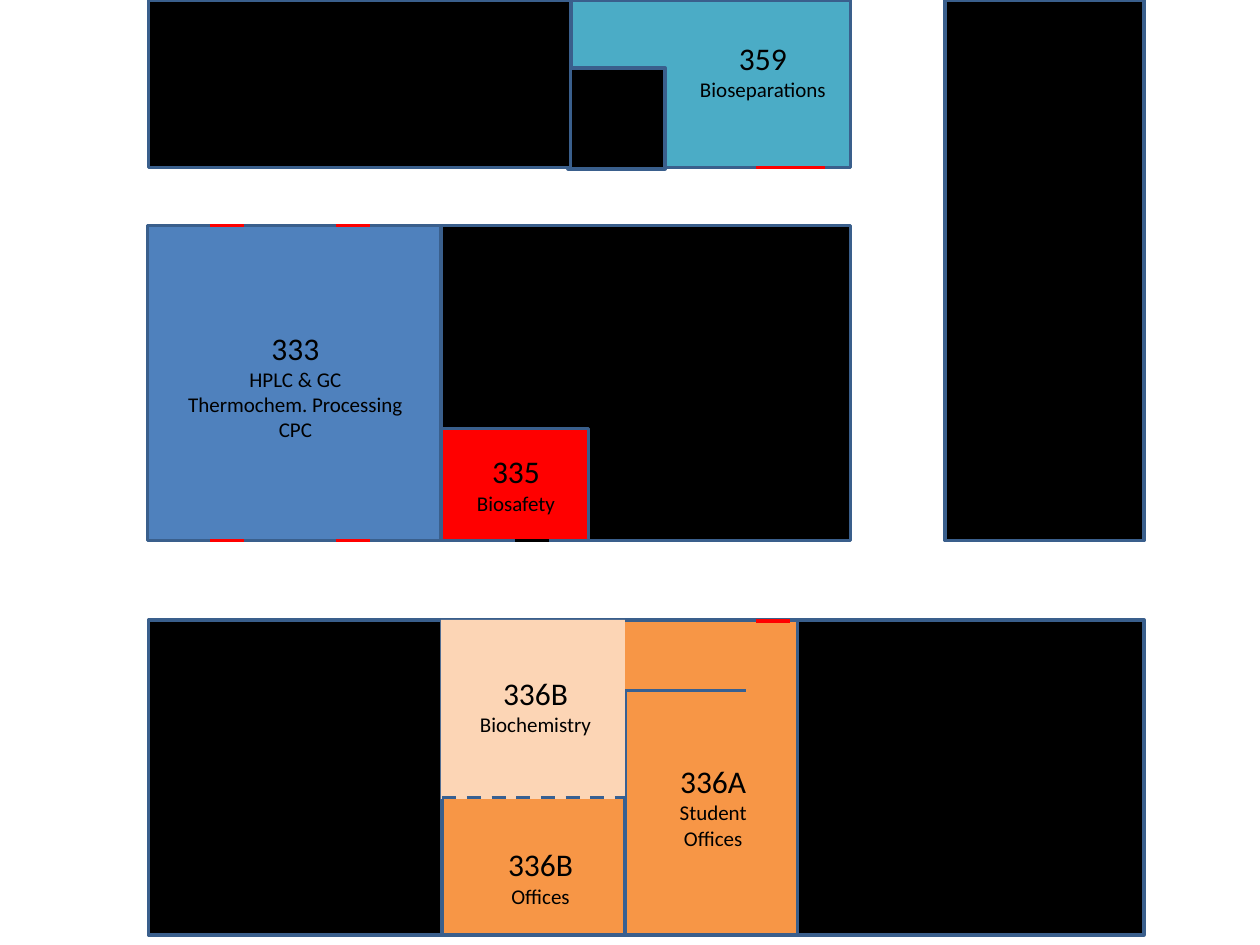
import dataclasses

import pptx
import pptx.dml.color
import pptx.enum.dml
import pptx.enum.shapes
import pptx.enum.text
import pptx.oxml
import pptx.oxml.ns
import pptx.util

Inches = pptx.util.Inches


@dataclasses.dataclass(frozen=True)
class Theme:
    font: str = "Calibri"
    number_size: int = 18
    use_size: int = 12
    line_width: int = 2
    black: str = "000000"
    outline: str = "3A5F8C"
    wall: str = "376092"
    red: str = "FF0000"
    blue: str = "4F81BD"
    teal: str = "4BACC6"
    orange: str = "F79646"
    peach: str = "FCD5B5"


def rgb(value):
    return pptx.dml.color.RGBColor.from_string(value)


class FloorPlan:
    def __init__(self, slide, theme):
        self.slide = slide
        self.theme = theme

    def room(self, left, top, width, height, fill, outlined=True):
        room = self.slide.shapes.add_shape(
            pptx.enum.shapes.MSO_SHAPE.RECTANGLE,
            Inches(left), Inches(top), Inches(width), Inches(height))
        room.shadow.inherit = False
        room.fill.solid()
        room.fill.fore_color.rgb = rgb(fill)
        if outlined:
            room.line.color.rgb = rgb(self.theme.outline)
            room.line.width = pptx.util.Pt(self.theme.line_width)
        else:
            room.line.fill.background()
        return room

    def wall(self, start, end, color, dashed=False):
        wall = self.slide.shapes.add_connector(
            pptx.enum.shapes.MSO_CONNECTOR.STRAIGHT,
            *(Inches(value) for value in (*start, *end)))
        wall.line.color.rgb = rgb(color)
        wall.line.width = pptx.util.Pt(self.theme.line_width)
        if dashed:
            wall.line.dash_style = pptx.enum.dml.MSO_LINE.DASH
        properties = wall.element.find(pptx.oxml.ns.qn("p:spPr"))
        properties.append(pptx.oxml.parse_xml(
            f'<a:effectLst {pptx.oxml.ns.nsdecls("a")}/>'))
        return wall

    def door(self, left, y, color, width=0.27):
        return self.wall((left, y), (left + width, y), color)

    def label(self, left, top, width, height, number, *uses):
        """Write the room number with its uses in smaller type below."""
        box = self.slide.shapes.add_textbox(
            Inches(left), Inches(top), Inches(width), Inches(height))
        frame = box.text_frame
        frame.word_wrap = True
        frame.auto_size = pptx.enum.text.MSO_AUTO_SIZE.SHAPE_TO_FIT_TEXT
        frame.text = "\n".join((number, *uses))
        for index, paragraph in enumerate(frame.paragraphs):
            size = self.theme.use_size if index else self.theme.number_size
            paragraph.alignment = pptx.enum.text.PP_ALIGN.CENTER
            paragraph.font.name = self.theme.font
            paragraph.font.size = pptx.util.Pt(size)
            paragraph.font.color.rgb = rgb(self.theme.black)


def main():
    deck = pptx.Presentation()
    deck.slide_width, deck.slide_height = Inches(10), Inches(7.5)
    theme = Theme()
    plan = FloorPlan(deck.slides.add_slide(deck.slide_layouts[6]), theme)

    block_height = 2.5
    upper_bottom = 1.33
    middle_top, middle_bottom = 1.79, 4.29
    lower_top, lower_bottom = 4.92, 7.42
    office_wall, lab_floor = 4.96, 6.33

    # Middle block and the room on the right
    plan.room(1.17, middle_top, 2.33, block_height, theme.blue)
    plan.room(3.5, middle_top, 3.25, block_height, theme.black)
    biosafety = plan.room(3.5, 3.4, 1.17, 0.89, theme.red)
    plan.room(7.5, 0, 1.58, middle_bottom, theme.black)

    # Upper block
    plan.room(4.53, 0, 2.22, upper_bottom, theme.teal)
    plan.room(4.51, 0.54, 0.77, 0.8, theme.black)
    plan.room(1.18, 0, 3.35, upper_bottom, theme.black)

    # Lower block
    plan.room(1.18, lower_top, 2.33, block_height, theme.black)
    plan.room(3.51, lower_top, 2.82, block_height, theme.orange)
    plan.room(6.33, lower_top, 2.75, block_height, theme.black)
    plan.wall((office_wall, 5.48), (office_wall, lower_bottom), theme.wall)
    plan.wall((office_wall, 5.48), (5.92, 5.48), theme.wall)
    plan.room(3.5, lower_top, 1.46, 1.42, theme.peach, outlined=False)
    plan.wall((3.51, lab_floor), (office_wall, lab_floor), theme.wall, dashed=True)

    for y in (middle_top, middle_bottom):
        for left in (1.67, 2.67):
            plan.door(left, y, theme.red)
    for left in (6, 6.27):
        plan.door(left, upper_bottom, theme.red, 0.28)
    plan.door(6, 4.93, theme.red)
    biosafety_door = plan.door(4.08, middle_bottom, theme.black, 0.28)
    biosafety_door.begin_connect(biosafety, 2)

    for label in (
        (5.4, 0.26, 1.31, 0.61, "359", "Bioseparations"),
        (1.31, 2.56, 2.07, 1.01, "333",
         "HPLC & GC", "Thermochem. Processing", "CPC"),
        (3.49, 3.54, 1.21, 0.61, "335", "Biosafety"),
        (3.54, 5.3, 1.42, 0.61, "336B", "Biochemistry"),
        (3.5, 6.66, 1.58, 0.61, "336B", "Offices"),
        (4.87, 6, 1.58, 0.81, "336A", "Student", "Offices"),
    ):
        plan.label(*label)

    deck.save("out.pptx")


if __name__ == "__main__":
    main()
